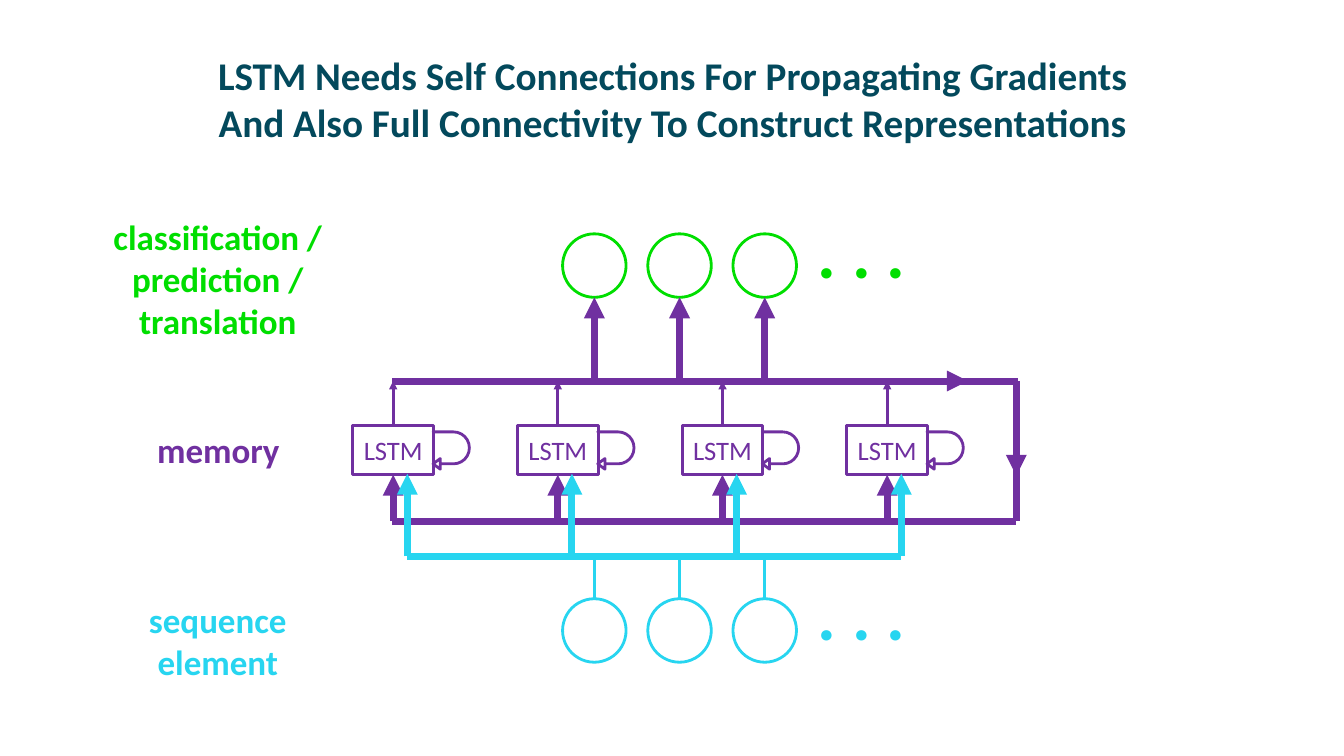
from dataclasses import dataclass
from typing import Optional

from lxml.etree import SubElement as Sub
from pptx import Presentation
from pptx.dml.color import RGBColor as RGB
from pptx.enum.shapes import MSO_CONNECTOR as Link, MSO_SHAPE as Kind
from pptx.enum.text import MSO_ANCHOR as Anchor, MSO_AUTO_SIZE as Fit, PP_ALIGN as Align
from pptx.oxml.ns import qn
from pptx.util import Inches, Pt


@dataclass(frozen=True)
class Theme:
    font: str = "Calibri"
    ink: str = "03495C"
    green: str = "00DE00"
    plum: str = "7030A0"
    sky: str = "27D5F0"
    white: str = "FFFFFF"
    title: int = 28
    label: int = 25
    cell: int = 19
    dots: int = 50
    thin: int = 2
    thick: int = 5


@dataclass(frozen=True)
class Note:
    text: str
    left: float
    top: float
    wide: float
    high: float
    size: int
    color: str
    pad: float = 0.1
    align: Align = Align.CENTER
    wrap: bool = False


@dataclass(frozen=True)
class Wire:
    x1: float
    y1: float
    x2: float
    y2: float
    color: str
    width: int
    arrow: bool = False


T = Theme()

# Grid: four memory cells, three units in each outer layer
CELLS = [3.5 + 1.633 * i for i in range(4)]
UNITS = [5.58 + 0.845 * i for i in range(3)]
CELL_W, CELL_H, CELL_Y = 0.8, 0.49, 4.22
UNIT = 0.63
OUT_Y, IN_Y = 2.32, 5.94
TOP_BUS, LOW_BUS, SKY_BUS = 3.78, 5.17, 5.52
LEFT, RIGHT = 3.89, 10.08

deck = Presentation()
deck.slide_width, deck.slide_height = Inches(13.33), Inches(7.5)
slide = deck.slides.add_slide(deck.slide_layouts[6])
shapes = slide.shapes


def style(frame, size: int, color: str, bold: bool, align: Align) -> None:
    for para in frame.paragraphs:
        para.alignment = align
        for run in para.runs:
            font = run.font
            font.name, font.size, font.bold = T.font, Pt(size), bold
            font.color.rgb = RGB.from_string(color)


def write(note: Note) -> None:
    box = shapes.add_textbox(*map(Inches, (note.left, note.top, note.wide, note.high)))
    frame = box.text_frame
    frame.word_wrap = note.wrap
    frame.auto_size = Fit.NONE if note.wrap else Fit.SHAPE_TO_FIT_TEXT
    frame.vertical_anchor = Anchor.MIDDLE if note.wrap else Anchor.TOP
    frame.margin_left = frame.margin_right = Inches(note.pad)
    frame.margin_top = frame.margin_bottom = Inches(note.pad / 2)
    frame.text = note.text
    style(frame, note.size, note.color, True, note.align)


def draw(kind: Kind, left: float, top: float, wide: float, high: float, color: str):
    shape = shapes.add_shape(kind, *map(Inches, (left, top, wide, high)))
    shape.shadow.inherit = False
    shape.fill.solid()
    shape.fill.fore_color.rgb = RGB.from_string(T.white)
    shape.line.color.rgb = RGB.from_string(color)
    shape.line.width = Pt(T.thin)
    return shape


def cell(left: float):
    box = draw(Kind.RECTANGLE, left, CELL_Y, CELL_W, CELL_H, T.plum)
    frame = box.text_frame
    frame.margin_left = frame.margin_right = frame.margin_top = frame.margin_bottom = 0
    frame.vertical_anchor = Anchor.MIDDLE
    frame.text = "LSTM"
    style(frame, T.cell, T.plum, False, Align.CENTER)
    # Self loop on the right side
    loop = draw(Kind.U_TURN_ARROW, left + CELL_W - 0.01, 4.29, 0.37, 0.36, T.plum)
    loop.rotation = 90
    for i, value in enumerate((0, 0.147, 0.199, 0.438, 1)):
        loop.adjustments[i] = value
    return box


def wire(w: Wire, start: Optional[tuple] = None, end: Optional[tuple] = None) -> None:
    line = shapes.add_connector(Link.STRAIGHT, *map(Inches, (w.x1, w.y1, w.x2, w.y2)))
    line.line.color.rgb = RGB.from_string(w.color)
    line.line.width = Pt(w.width)
    if w.arrow:
        Sub(line.line._get_or_add_ln(), qn("a:tailEnd"), type="triangle")
    Sub(line._element.spPr, qn("a:effectLst"))
    if start:
        line.begin_connect(*start)
    if end:
        line.end_connect(*end)


def main() -> None:
    # Title and layer labels
    write(Note("LSTM Needs Self Connections For Propagating Gradients\v"
               "And Also Full Connectivity To Construct Representations",
               0.67, 0.17, 12, 1.61, T.title, T.ink, wrap=True))
    write(Note("classification /\vprediction /\ntranslation", 1.01, 2.09, 2.3, 1.36, T.label, T.green))
    write(Note("memory", 1.45, 4.2, 1.43, 0.52, T.label, T.plum))
    write(Note("sequence\nelement", 1.37, 5.89, 1.58, 0.94, T.label, T.sky))

    # Memory cells with their wires to the plum buses
    boxes = [cell(left) for left in CELLS]
    for left, box in zip(CELLS, boxes):
        mid, base = left + CELL_W / 2, CELL_Y + CELL_H
        wire(Wire(mid, CELL_Y, mid, TOP_BUS, T.plum, T.thin, True), start=(box, 0))
        wire(Wire(mid, LOW_BUS, mid, base, T.plum, T.thick, True), end=(box, 2))

    # Feedback path: top bus, right side, low bus
    for x1, y1, x2, y2, arrow in (
        (LEFT, TOP_BUS, 9.6, TOP_BUS, True),
        (LEFT, TOP_BUS, 10.1, TOP_BUS, False),
        (RIGHT, TOP_BUS, RIGHT, 4.72, True),
        (RIGHT, TOP_BUS, RIGHT, LOW_BUS, False),
        (LEFT, LOW_BUS, RIGHT, LOW_BUS, False),
    ):
        wire(Wire(x1, y1, x2, y2, T.plum, T.thick, arrow))

    # Input bus feeding each cell
    feeds = [left + 0.54 for left in CELLS]
    wire(Wire(feeds[0], SKY_BUS, feeds[-1], SKY_BUS, T.sky, T.thick))
    for x in feeds:
        wire(Wire(x, SKY_BUS, x, 4.7, T.sky, T.thick, True))

    # Output and input units
    for left in UNITS:
        mid = left + UNIT / 2
        draw(Kind.OVAL, left, OUT_Y, UNIT, UNIT, T.green)
        wire(Wire(mid, TOP_BUS, mid, OUT_Y + UNIT, T.plum, T.thick, True))
        unit = draw(Kind.OVAL, left, IN_Y, UNIT, UNIT, T.sky)
        wire(Wire(mid, IN_Y, mid, SKY_BUS, T.sky, T.thin), start=(unit, 0))
    for top, color in ((2.07, T.green), (5.66, T.sky)):
        write(Note(". . .", 8.11, top, 1.14, 1.09, T.dots, color, 0, Align.LEFT))

    deck.save("out.pptx")


if __name__ == "__main__":
    main()
